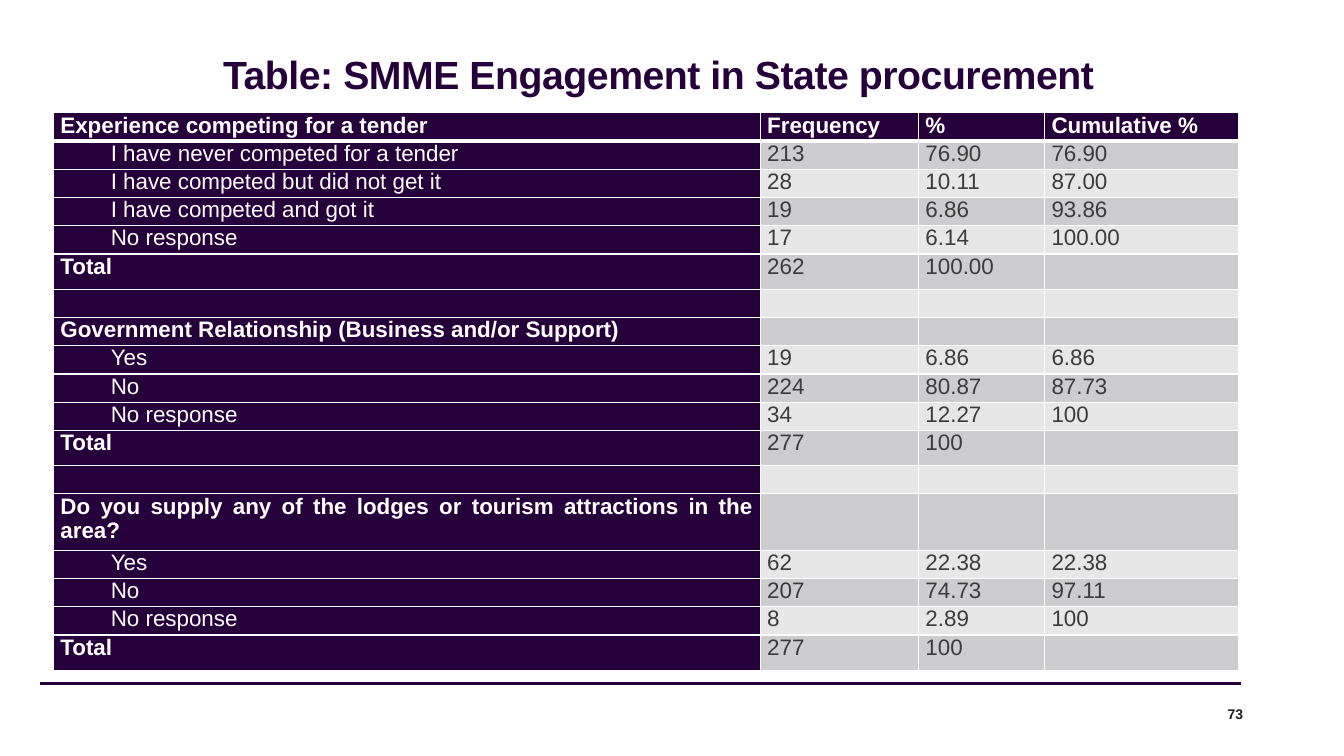
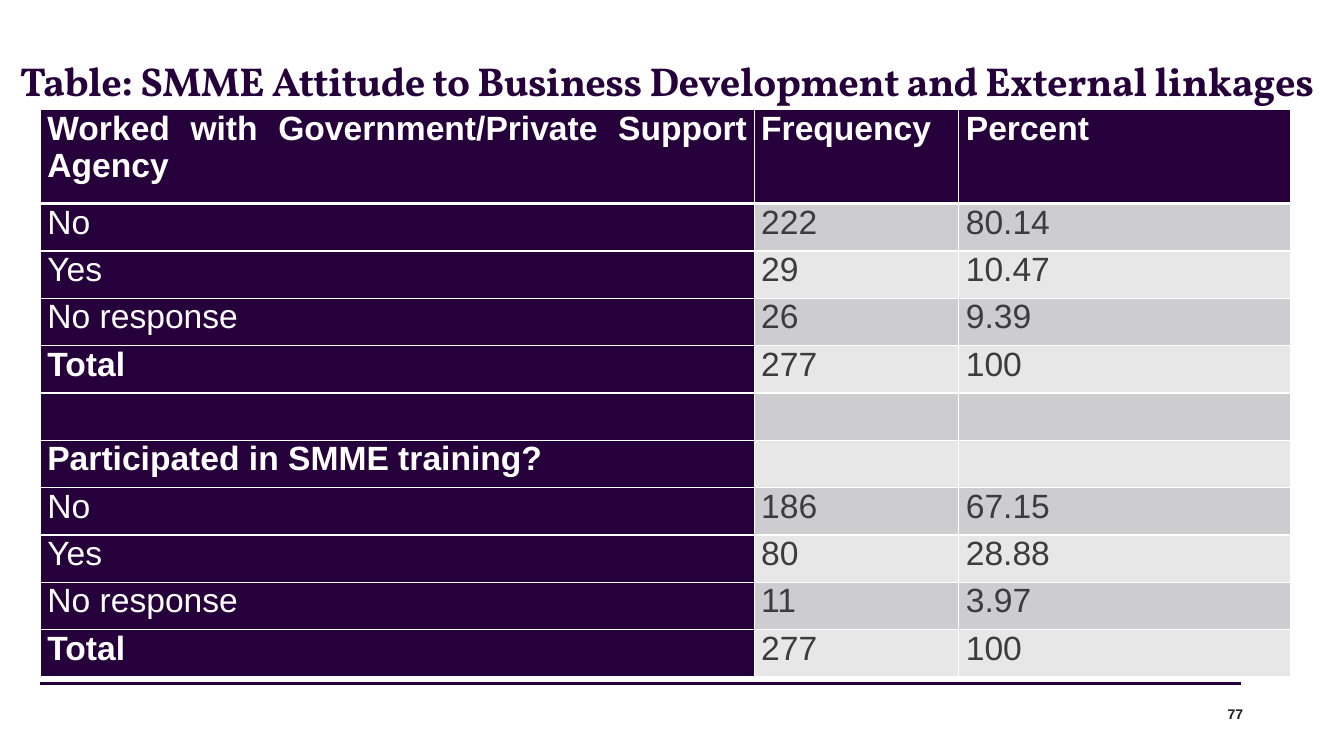
from lxml import etree
from pptx import Presentation
from pptx import util as u
from pptx.dml.color import RGBColor
from pptx.enum import shapes, text
from pptx.oxml.ns import qn

PURPLE, WHITE, INK, BLACK = "26003B", "FFFFFF", "3C3C3C", "1E1E1E"
BANDS = ("E8E7E8", "CDCCCE")
ALIGN = text.PP_ALIGN
ANCHOR = text.MSO_ANCHOR


def rgb(value):
    return RGBColor.from_string(value)


def write(tf, content, size, color, font="Arial", bold=False,
          align=ALIGN.JUSTIFY, indent=0, spacing=None, tracking=0):
    """Fill the first paragraph; empty content still fixes its line height."""
    p = tf.paragraphs[0]
    p.alignment = align
    if spacing:
        p.line_spacing = spacing
    if indent:
        pPr = p._p.get_or_add_pPr()
        pPr.set("marL", "0")
        pPr.set("indent", str(u.Inches(indent)))
    if not content:
        etree.SubElement(p._p, qn("a:endParaRPr"), sz=str(size * 100))
        return
    r = p.add_run()
    r.text = content
    f = r.font
    f.name, f.size, f.bold = font, u.Pt(size), bold
    f.color.rgb = rgb(color)
    if tracking:
        r._r.get_or_add_rPr().set("spc", str(round(tracking * 100)))


def set_borders(cell, top=1, bottom=1):
    """White borders; the XML schema wants them ahead of the fill."""
    tcPr = cell._tc.get_or_add_tcPr()
    sides = (("L", 1), ("R", 1), ("T", top), ("B", bottom))
    for i, (side, width) in enumerate(sides):
        ln = etree.Element(qn("a:ln" + side), w=str(u.Pt(width)))
        fill = etree.SubElement(ln, qn("a:solidFill"))
        etree.SubElement(fill, qn("a:srgbClr"), val=WHITE)
        tcPr.insert(i, ln)


class Deck:
    """Holds the presentation, its style and the current slide."""

    def __init__(self):
        self.prs = Presentation()
        self.prs.slide_width = u.Inches(13.33)
        self.prs.slide_height = u.Inches(7.5)

    def slide(self, number):
        self.s = self.prs.slides.add_slide(self.prs.slide_layouts[5])
        self.rule()
        self.page_number(number)

    def frame(self, sp, anchor):
        tf = sp.text_frame
        tf.margin_left = tf.margin_right = tf.margin_top = tf.margin_bottom = 0
        tf.auto_size = text.MSO_AUTO_SIZE.NONE
        tf.word_wrap = True
        tf.vertical_anchor = anchor
        return tf

    def rule(self):
        y = u.Inches(6.78)
        line = self.s.shapes.add_connector(
            shapes.MSO_CONNECTOR.STRAIGHT, u.Inches(0.4), y, u.Inches(12.31), y)
        line.line.color.rgb = rgb(PURPLE)
        line.line.width = u.Pt(2.25)
        etree.SubElement(line._element.spPr, qn("a:effectLst"))

    def page_number(self, number):
        sp = self.s.shapes.add_textbox(*map(u.Inches, (11.79, 6.96, 0.54, 0.24)))
        write(self.frame(sp, ANCHOR.MIDDLE), str(number), 10, BLACK,
              bold=True, align=ALIGN.RIGHT)

    def title(self, content, box, size=28, font="Arial"):
        sp = self.s.shapes.title
        sp.left, sp.top, sp.width, sp.height = map(u.Inches, box)
        write(self.frame(sp, ANCHOR.BOTTOM), content, size, PURPLE, font=font,
              bold=True, align=ALIGN.CENTER, spacing=0.9, tracking=-0.3)

    def table(self, rows, left, top, widths, row_height, size, indent=0, tall=None):
        """Rows with a lone label are headings; tall maps labels to heights."""
        tall = tall or {}
        heights = [tall.get(row[0], row_height) for row in rows]
        tbl = self.s.shapes.add_table(
            len(rows), len(widths), u.Inches(left), u.Inches(top),
            u.Inches(sum(widths)), u.Inches(sum(heights))).table
        tbl.horz_banding = False
        for col, width in zip(tbl.columns, widths):
            col.width = u.Inches(width)
        for i, row in enumerate(rows):
            tbl.rows[i].height = u.Inches(heights[i])
            strong = i == 0 or len(row) == 1 or row[0] == "Total"
            for j in range(len(widths)):
                cell = tbl.cell(i, j)
                dark = i == 0 or j == 0
                cell.margin_left = cell.margin_right = u.Inches(0.07)
                cell.margin_top = cell.margin_bottom = 0
                cell.fill.solid()
                cell.fill.fore_color.rgb = rgb(PURPLE if dark else BANDS[i % 2])
                set_borders(cell, top=3 if i == 1 else 1, bottom=3 if i == 0 else 1)
                write(cell.text_frame, row[j] if j < len(row) else "", size,
                      WHITE if dark else INK, bold=dark and strong,
                      indent=0 if strong or j else indent)


PROCUREMENT = [
    ("Experience competing for a tender", "Frequency", "%", "Cumulative %"),
    ("I have never competed for a tender", "213", "76.90", "76.90"),
    ("I have competed but did not get it", "28", "10.11", "87.00"),
    ("I have competed and got it", "19", "6.86", "93.86"),
    ("No response", "17", "6.14", "100.00"),
    ("Total", "262", "100.00"),
    ("",),
    ("Government Relationship (Business and/or Support)",),
    ("Yes", "19", "6.86", "6.86"),
    ("No", "224", "80.87", "87.73"),
    ("No response", "34", "12.27", "100"),
    ("Total", "277", "100"),
    ("",),
    ("Do you supply any of the lodges or tourism attractions in the area?",),
    ("Yes", "62", "22.38", "22.38"),
    ("No", "207", "74.73", "97.11"),
    ("No response", "8", "2.89", "100"),
    ("Total", "277", "100"),
]

ATTITUDE = [
    ("Worked with Government/Private Support Agency", "Frequency", "Percent"),
    ("No", "222", "80.14"),
    ("Yes", "29", "10.47"),
    ("No response", "26", "9.39"),
    ("Total", "277", "100"),
    ("",),
    ("Participated in SMME training?",),
    ("No", "186", "67.15"),
    ("Yes", "80", "28.88"),
    ("No response", "11", "3.97"),
    ("Total", "277", "100"),
]


def main():
    deck = Deck()

    deck.slide(73)
    deck.title("Table: SMME Engagement in State procurement", (0.29, 0.33, 12.48, 0.64))
    deck.table(PROCUREMENT, 0.53, 1.12, (7.01, 1.57, 1.25, 1.93), 0.28, 16,
               indent=0.5, tall={"Total": 0.35, PROCUREMENT[13][0]: 0.56})

    deck.slide(77)
    deck.title("Table: SMME Attitude to Business Development and External linkages",
               (0.15, 0.31, 12.93, 0.73), size=28.8, font="Vollkorn")
    deck.table(ATTITUDE, 0.4, 1.09, (7.08, 2.03, 3.29), 0.47, 24,
               tall={ATTITUDE[0][0]: 0.93})

    deck.prs.save("out.pptx")


if __name__ == "__main__":
    main()
